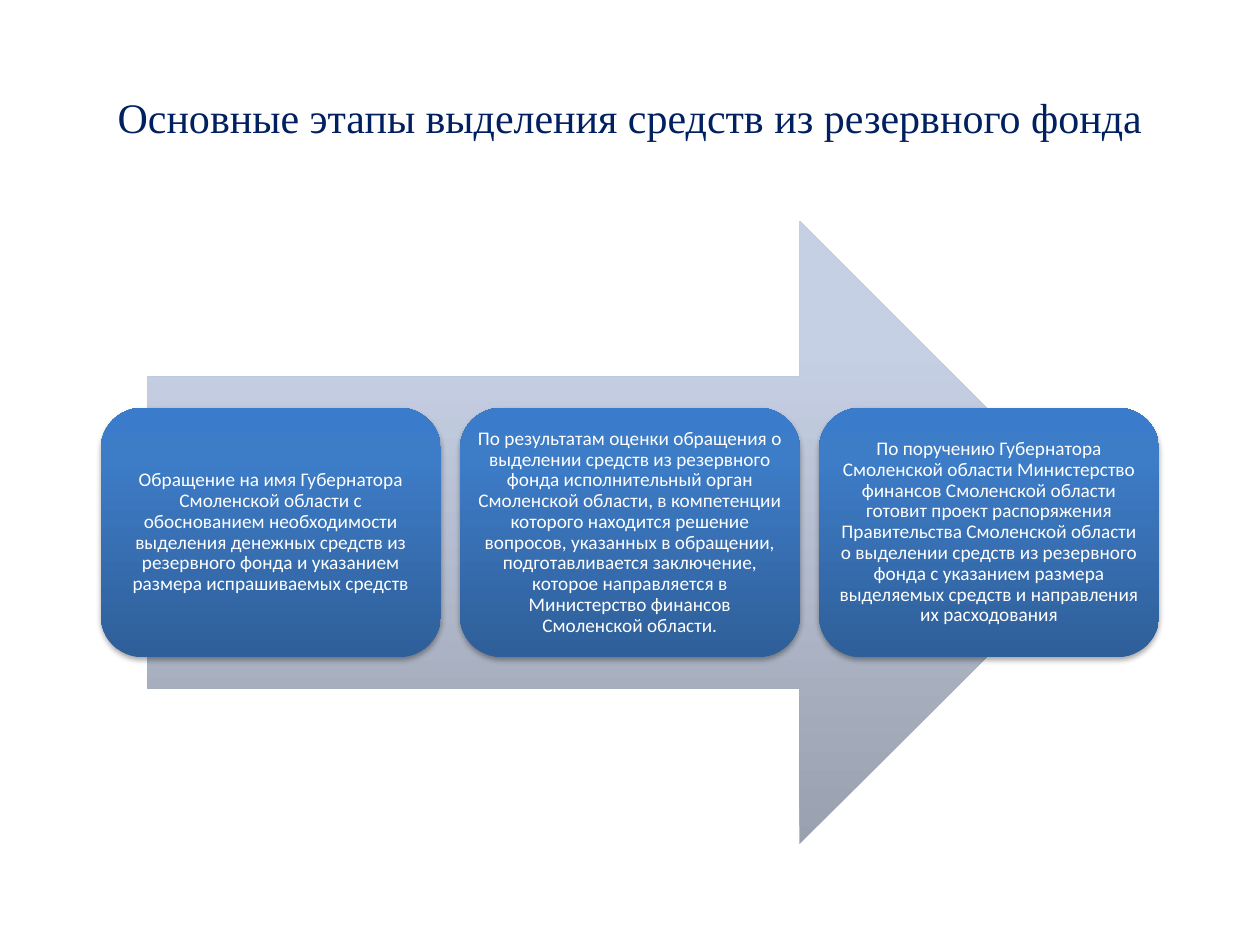
from copy import deepcopy
from dataclasses import dataclass

from pptx import Presentation
from pptx.dml.color import RGBColor as Rgb
from pptx.enum.shapes import MSO_SHAPE as Preset
from pptx.enum.text import MSO_ANCHOR as Anchor, PP_ALIGN as Align
from pptx.oxml import parse_xml
from pptx.oxml.ns import nsdecls, qn
from pptx.util import Cm, Pt


@dataclass(frozen=True)
class Theme:
    title_font: str = "Times New Roman"
    body_font: str = "Calibri"
    title_size: int = 24
    body_size: int = 11
    title_color: str = "002060"
    body_color: str = "FFFFFF"
    arrow_gradient: tuple = ((0, "99A0AF"), (0.8, "C6D0E4"), (1, "C7D1E5"))
    stage_gradient: tuple = ((0, "2F5F99"), (0.8, "3D7CC7"), (1, "3A7CCB"))


SHADOW = f"""<a:effectLst {nsdecls("a")}>
  <a:outerShdw blurRad="40000" dist="23000" dir="5400000" rotWithShape="0">
    <a:srgbClr val="000000"><a:alpha val="35000"/></a:srgbClr>
  </a:outerShdw>
</a:effectLst>"""

HEADING = "Основные этапы выделения средств из резервного фонда"
STAGES = (
    "Обращение на имя Губернатора Смоленской области с обоснованием "
    "необходимости выделения денежных средств из резервного фонда и "
    "указанием размера испрашиваемых средств",
    "По результатам оценки обращения о выделении средств из резервного фонда "
    "исполнительный орган Смоленской области, в компетенции которого находится "
    "решение вопросов, указанных в обращении, подготавливается заключение, "
    "которое направляется в Министерство финансов Смоленской области.",
    "По поручению Губернатора Смоленской области Министерство финансов "
    "Смоленской области готовит проект распоряжения Правительства Смоленской "
    "области о выделении средств из резервного фонда с указанием размера "
    "выделяемых средств и направления их расходования",
)


class StageSlide:
    def __init__(self, slide, theme):
        self.slide = slide
        self.theme = theme

    def set_text(self, shape, text, font, size, color):
        frame = shape.text_frame
        frame.text = text
        frame.word_wrap = True
        frame.vertical_anchor = Anchor.MIDDLE
        paragraph = frame.paragraphs[0]
        paragraph.alignment = Align.CENTER
        for run in paragraph.runs:
            run.font.name = font
            run.font.size = Pt(size)
            run.font.color.rgb = Rgb.from_string(color)
        return frame

    def title(self, text, left, top, width, height):
        heading = self.slide.shapes.title
        heading.left, heading.top = Cm(left), Cm(top)
        heading.width, heading.height = Cm(width), Cm(height)
        theme = self.theme
        self.set_text(heading, text, theme.title_font, theme.title_size, theme.title_color)

    def gradient_shape(self, preset, gradient, left, top, width, height):
        shape = self.slide.shapes.add_shape(
            preset, Cm(left), Cm(top), Cm(width), Cm(height)
        )
        shape.shadow.inherit = False
        shape.line.fill.background()
        shape.fill.gradient()
        shape.fill.gradient_angle = 90
        stop_list = next(shape.element.iter(qn("a:gsLst")))
        while len(stop_list) < len(gradient):
            stop_list.append(deepcopy(stop_list[-1]))
        for stop, (position, color) in zip(shape.fill.gradient_stops, gradient):
            stop.position = position
            stop.color.rgb = Rgb.from_string(color)
        return shape

    def arrow(self, left, top, width, height):
        self.gradient_shape(
            Preset.RIGHT_ARROW, self.theme.arrow_gradient, left, top, width, height
        )

    def stage(self, text, left, top, width, height):
        theme = self.theme
        card = self.gradient_shape(
            Preset.ROUNDED_RECTANGLE, theme.stage_gradient, left, top, width, height
        )
        effects = card.element.spPr.find(qn("a:effectLst"))
        effects.getparent().replace(effects, parse_xml(SHADOW))
        frame = self.set_text(card, text, theme.body_font, theme.body_size, theme.body_color)
        frame.margin_left = frame.margin_right = Cm(0.12)
        frame.margin_top = frame.margin_bottom = Cm(0.12)
        frame.paragraphs[0].line_spacing = 0.9


def main():
    deck = Presentation()
    deck.slide_width, deck.slide_height = Cm(25.4), Cm(19.05)
    title_only = deck.slide_layouts[5]
    page = StageSlide(deck.slides.add_slide(title_only), Theme())

    page.title(HEADING, 1.27, 0.76, 22.86, 3.18)
    page.arrow(2.97, 4.45, 19.43, 12.57)
    first_left, stage_width, gap = 2.03, 6.86, 0.38
    for index, text in enumerate(STAGES):
        page.stage(text, first_left + index * (stage_width + gap), 8.22, stage_width, 5.03)

    deck.save("out.pptx")


if __name__ == "__main__":
    main()
